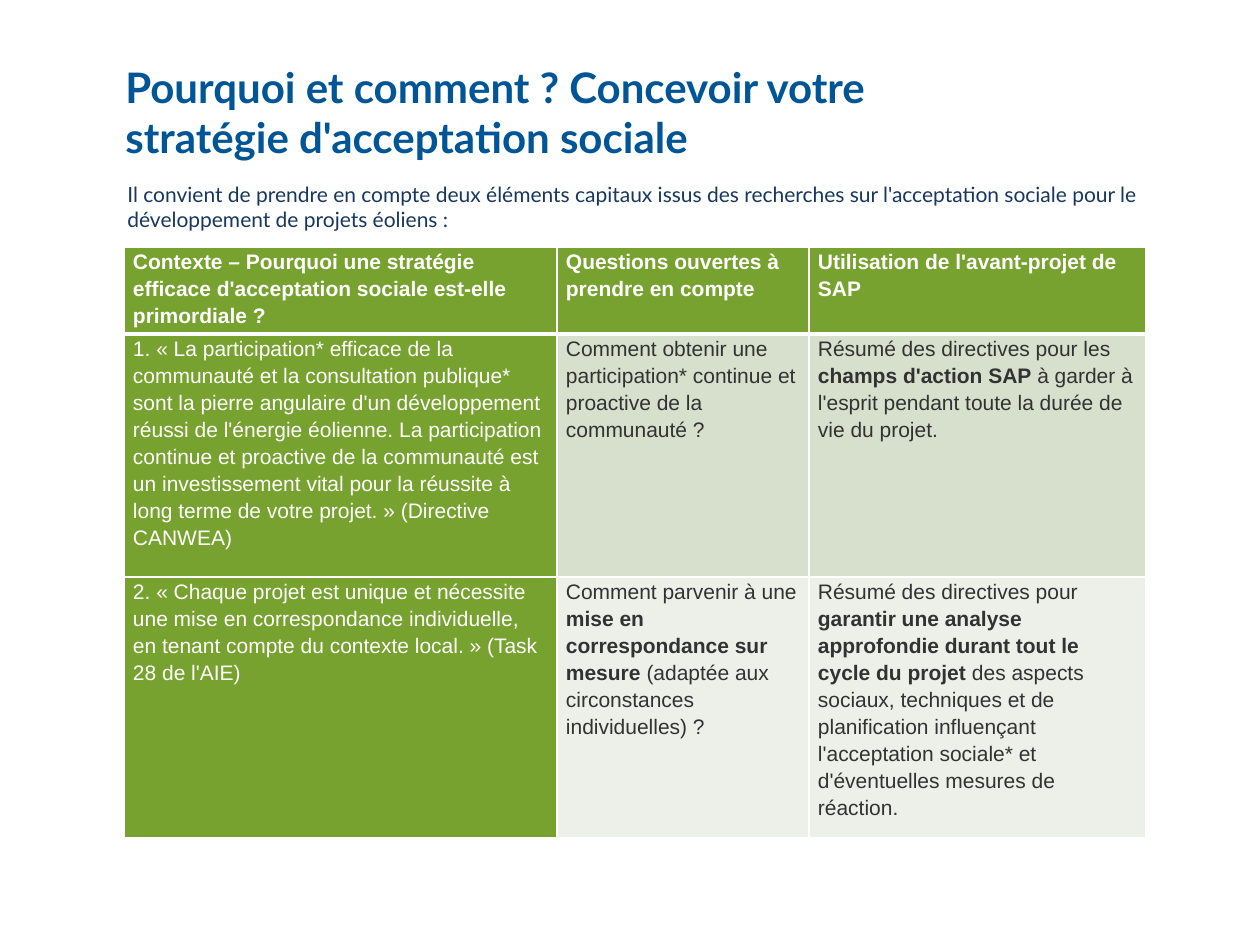
from dataclasses import dataclass

from lxml.etree import SubElement
from pptx import Presentation
from pptx.dml.color import RGBColor
from pptx.enum.text import MSO_ANCHOR
from pptx.oxml.ns import qn
from pptx.slide import Slide
from pptx.table import _Cell
from pptx.text.text import TextFrame
from pptx.util import Emu, Pt

PX_PER_INCH = 126


@dataclass(frozen=True)
class Theme:
    title_color: str = "005596"
    intro_color: str = "17375E"
    text_color: str = "323232"
    green: str = "78A22F"
    white: str = "FFFFFF"
    bands: tuple[str, str] = ("D6E0CD", "ECF0E8")
    heading_font: str = "Lato"
    table_font: str = "Arial"
    title_size: int = 24
    body_size: int = 12


@dataclass(frozen=True)
class Box:
    left: int
    top: int
    width: int
    height: int


@dataclass(frozen=True)
class Span:
    text: str
    bold: bool = False


THEME = Theme()
TITLE_BOX = Box(113, 55, 930, 89)
INTRO_BOX = Box(115, 175, 1142, 586)
TABLE_BOX = Box(124, 247, 1022, 567)
COLUMN_WIDTHS = (433, 252, 337)
ROW_HEIGHTS = (81, 243, 243)

TITLE = "Pourquoi et comment ? Concevoir votre stratégie d'acceptation sociale"
INTRO = (
    "Il convient de prendre en compte deux éléments capitaux issus des recherches "
    "sur l'acceptation sociale pour le développement de projets éoliens :"
)
HEADERS = (
    "Contexte – Pourquoi une stratégie efficace d'acceptation sociale est-elle primordiale ?",
    "Questions ouvertes à prendre en compte",
    "Utilisation de l'avant-projet de SAP",
)
ROWS = (
    (
        [Span(
            "1. « La participation* efficace de la communauté et la consultation publique* "
            "sont la pierre angulaire d'un développement réussi de l'énergie éolienne. "
            "La participation continue et proactive de la communauté est un investissement "
            "vital pour la réussite à long terme de votre projet. » (Directive CANWEA)"
        )],
        [Span("Comment obtenir une participation* continue et proactive de la communauté ?")],
        [
            Span("Résumé des directives pour les "),
            Span("champs d'action SAP ", bold=True),
            Span("à garder à l'esprit pendant toute la durée de vie du projet."),
        ],
    ),
    (
        [Span(
            "2. « Chaque projet est unique et nécessite une mise en correspondance "
            "individuelle, en tenant compte du contexte local. » (Task 28 de l'AIE)"
        )],
        [
            Span("Comment parvenir à une "),
            Span("mise en correspondance sur mesure ", bold=True),
            Span("(adaptée aux circonstances individuelles) ?"),
        ],
        [
            Span("Résumé des directives pour "),
            Span("garantir une analyse approfondie durant tout le cycle du projet", bold=True),
            Span(
                " des aspects sociaux, techniques et de planification influençant "
                "l'acceptation sociale* et d'éventuelles mesures de réaction."
            ),
        ],
    ),
)


def px(length: int) -> Emu:
    return Emu(round(length * 914400 / PX_PER_INCH))


def write_text(frame: TextFrame, spans: list[Span], *, font: str, size: int,
               color: str, line_spacing: float = 1.0) -> None:
    para = frame.paragraphs[0]
    para.line_spacing = line_spacing
    for span in spans:
        run = para.add_run()
        run.text = span.text
        run.font.name = font
        run.font.size = Pt(size)
        run.font.bold = span.bold
        run.font.color.rgb = RGBColor.from_string(color)


def add_text_box(page: Slide, box: Box, span: Span, *, size: int, color: str) -> None:
    shape = page.shapes.add_textbox(px(box.left), px(box.top), px(box.width), px(box.height))
    frame = shape.text_frame
    frame.word_wrap = True
    frame.vertical_anchor = MSO_ANCHOR.TOP
    write_text(frame, [span], font=THEME.heading_font, size=size, color=color)


def set_borders(cell: _Cell, **widths: int) -> None:
    """Draw white borders; each keyword is a side (L, R, T, B) with its points."""
    properties = cell._tc.get_or_add_tcPr()
    for side, width in widths.items():
        line = SubElement(properties, qn(f"a:ln{side}"), w=str(Pt(width)))
        fill = SubElement(line, qn("a:solidFill"))
        SubElement(fill, qn("a:srgbClr"), val=THEME.white)


def fill_cell(cell: _Cell, spans: list[Span], *, fill: str, color: str,
              top_border: int, bottom_border: int) -> None:
    cell.margin_left = cell.margin_right = px(9)
    cell.margin_top = cell.margin_bottom = 0
    set_borders(cell, L=1, R=1, T=top_border, B=bottom_border)
    cell.fill.solid()
    cell.fill.fore_color.rgb = RGBColor.from_string(fill)
    write_text(cell.text_frame, spans, font=THEME.table_font, size=THEME.body_size,
               color=color, line_spacing=1.15)


def add_strategy_table(page: Slide) -> None:
    box = TABLE_BOX
    table = page.shapes.add_table(
        len(ROW_HEIGHTS), len(COLUMN_WIDTHS),
        px(box.left), px(box.top), px(box.width), px(box.height),
    ).table
    for column, width in zip(table.columns, COLUMN_WIDTHS):
        column.width = px(width)
    for row, height in zip(table.rows, ROW_HEIGHTS):
        row.height = px(height)

    for index, header in enumerate(HEADERS):
        fill_cell(table.cell(0, index), [Span(header, bold=True)], fill=THEME.green,
                  color=THEME.white, top_border=1, bottom_border=3)
    for row_index, (contents, band) in enumerate(zip(ROWS, THEME.bands), start=1):
        for index, spans in enumerate(contents):
            is_context = index == 0
            fill_cell(
                table.cell(row_index, index), spans,
                fill=THEME.green if is_context else band,
                color=THEME.white if is_context else THEME.text_color,
                top_border=3 if row_index == 1 else 1, bottom_border=1,
            )


def main() -> None:
    deck = Presentation()
    deck.slide_width, deck.slide_height = px(1260), px(945)
    page = deck.slides.add_slide(deck.slide_layouts[6])
    add_text_box(page, TITLE_BOX, Span(TITLE, bold=True),
                 size=THEME.title_size, color=THEME.title_color)
    add_text_box(page, INTRO_BOX, Span(INTRO), size=THEME.body_size, color=THEME.intro_color)
    add_strategy_table(page)
    deck.save("out.pptx")


if __name__ == "__main__":
    main()
